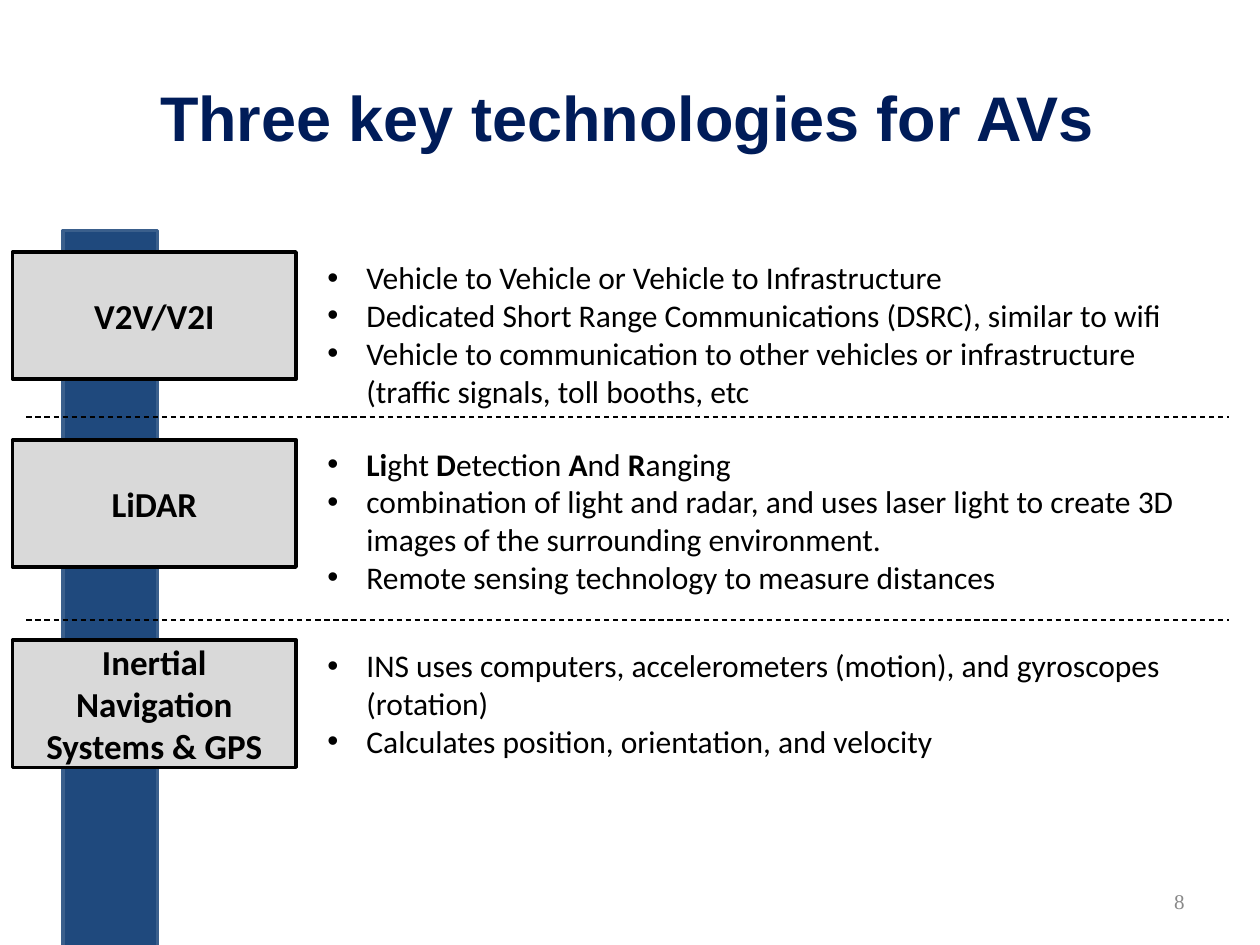
from lxml import etree
from pptx import Presentation
from pptx import util as u
from pptx.dml import color
from pptx.enum import dml, shapes, text
from pptx.oxml import ns

ROWS = [
    ("V2V/V2I", 2, 2, 1.31, [
        "Vehicle to Vehicle or Vehicle to Infrastructure",
        "Dedicated Short Range Communications (DSRC), similar to wifi",
        "Vehicle to communication to other vehicles or infrastructure "
        "(traffic signals, toll booths, etc",
    ]),
    ("LiDAR", 3.49, 3.48, 1.31, [
        "*Li*ght *D*etection *A*nd *R*anging",
        "combination of light and radar, and uses laser light to create 3D "
        "images of the surrounding environment.",
        "Remote sensing technology to measure distances",
    ]),
    ("Inertial Navigation Systems & GPS", 5.08, 5.08, 1.01, [
        "INS uses computers, accelerometers (motion), and gyroscopes (rotation)",
        "Calculates position, orientation, and velocity",
    ]),
]


def rgb(code):
    return color.RGBColor.from_string(code)


class Deck:
    face = "Calibri"
    ink = "000000"

    def __init__(self, wide, high):
        self.prs = Presentation()
        self.prs.slide_width = u.Inches(wide)
        self.prs.slide_height = u.Inches(high)
        self.slide = self.prs.slides.add_slide(self.prs.slide_layouts[5])

    def style(self, para, size, tint=None, face=None, bold=None, align="LEFT"):
        para.alignment = getattr(text.PP_ALIGN, align)
        font = para.font
        font.size = u.Pt(size)
        font.name = face or self.face
        font.color.rgb = rgb(tint or self.ink)
        font.bold = bold

    def title(self, words, *area):
        head = self.slide.shapes.title
        head.left, head.top, head.width, head.height = map(u.Inches, area)
        frame = head.text_frame
        frame.text = words
        frame.vertical_anchor = text.MSO_ANCHOR.MIDDLE
        self.style(frame.paragraphs[0], 36, "001C59", "Arial", True)

    def block(self, fill, edge, *area, label=None):
        shape = self.slide.shapes.add_shape(
            shapes.MSO_SHAPE.RECTANGLE, *map(u.Inches, area))
        shape.shadow.inherit = False
        shape.fill.solid()
        shape.fill.fore_color.rgb = rgb(fill)
        shape.line.color.rgb = rgb(edge)
        shape.line.width = u.Pt(2)
        if label:
            frame = shape.text_frame
            frame.text = label
            frame.word_wrap = True
            frame.vertical_anchor = text.MSO_ANCHOR.MIDDLE
            self.style(frame.paragraphs[0], 20, bold=True, align="CENTER")

    def box(self, *area):
        frame = self.slide.shapes.add_textbox(*map(u.Inches, area)).text_frame
        frame.word_wrap = True
        return frame

    def bullets(self, items, *area):
        frame = self.box(*area)
        frame.auto_size = text.MSO_AUTO_SIZE.SHAPE_TO_FIT_TEXT
        for i, item in enumerate(items):
            para = frame.add_paragraph() if i else frame.paragraphs[0]
            props = para._p.get_or_add_pPr()
            props.set("marL", str(u.Inches(0.31)))
            props.set("indent", str(u.Inches(-0.31)))
            etree.SubElement(props, ns.qn("a:buFont"), typeface="Arial")
            etree.SubElement(props, ns.qn("a:buChar"), char="•")
            for j, part in enumerate(item.split("*")):
                if part:
                    run = para.add_run()
                    run.text = part
                    if j % 2:
                        run.font.bold = True
            self.style(para, 18)

    def rule(self, y):
        line = self.slide.shapes.add_connector(
            shapes.MSO_CONNECTOR.STRAIGHT,
            *map(u.Inches, (0.21, y, 9.75, y)))
        line.line.color.rgb = rgb(self.ink)
        line.line.width = u.Pt(0.75)
        line.line.dash_style = dml.MSO_LINE.DASH
        etree.SubElement(line._element.spPr, ns.qn("a:effectLst"))

    def number(self, words, *area):
        frame = self.box(*area)
        frame.text = words
        frame.vertical_anchor = text.MSO_ANCHOR.MIDDLE
        self.style(frame.paragraphs[0], 12, "898989", "Times New Roman",
                   align="RIGHT")


def main():
    deck = Deck(10, 7.5)
    deck.title("Three key technologies for AVs", 1.17, 0.3, 8.83, 1.25)
    deck.number("8", 7.17, 6.95, 2.33, 0.4)
    deck.block("1F497D", "3A5F8C", 0.5, 1.83, 0.75, 5.92)
    for label, top, start, high, items in ROWS:
        deck.block("D9D9D9", "000000", 0.1, top, 2.25, 1.01, label=label)
        deck.bullets(items, 2.5, start, 7.25, high)
    for y in (3.31, 4.92):
        deck.rule(y)
    deck.prs.save("out.pptx")


if __name__ == "__main__":
    main()
